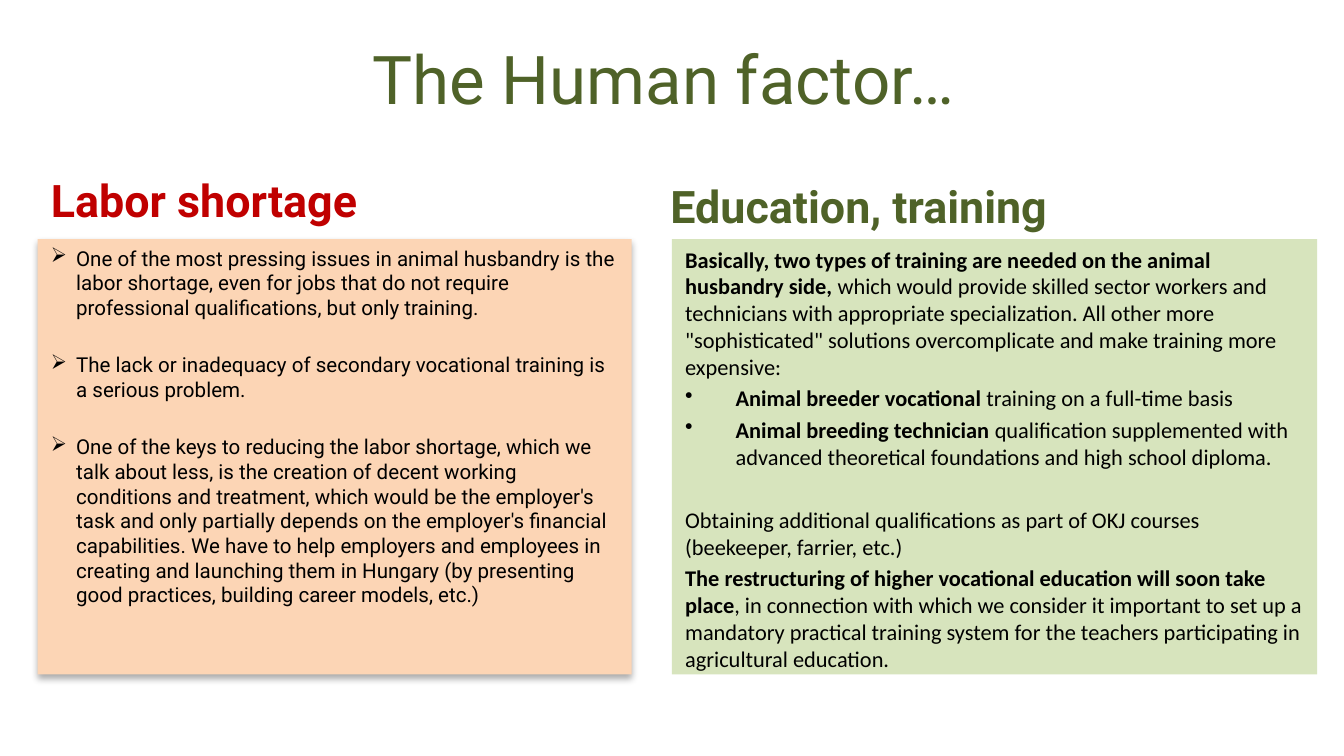
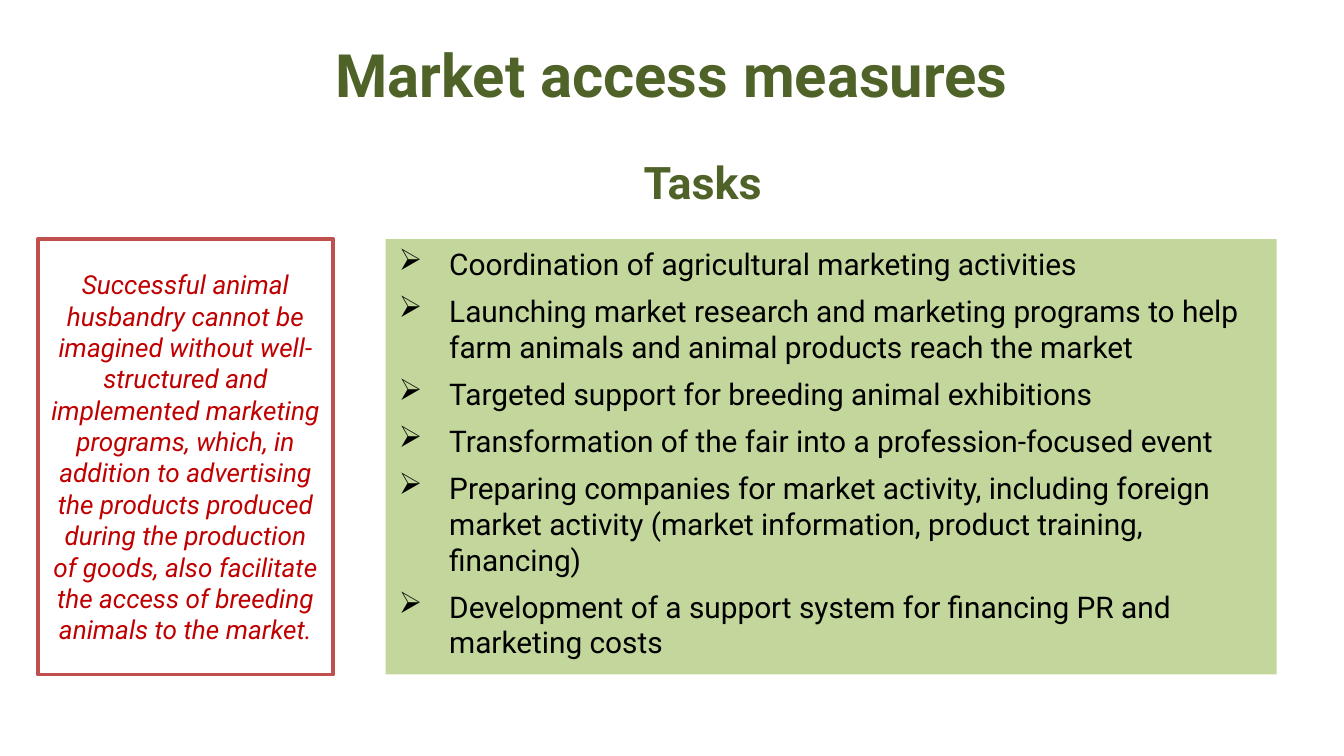
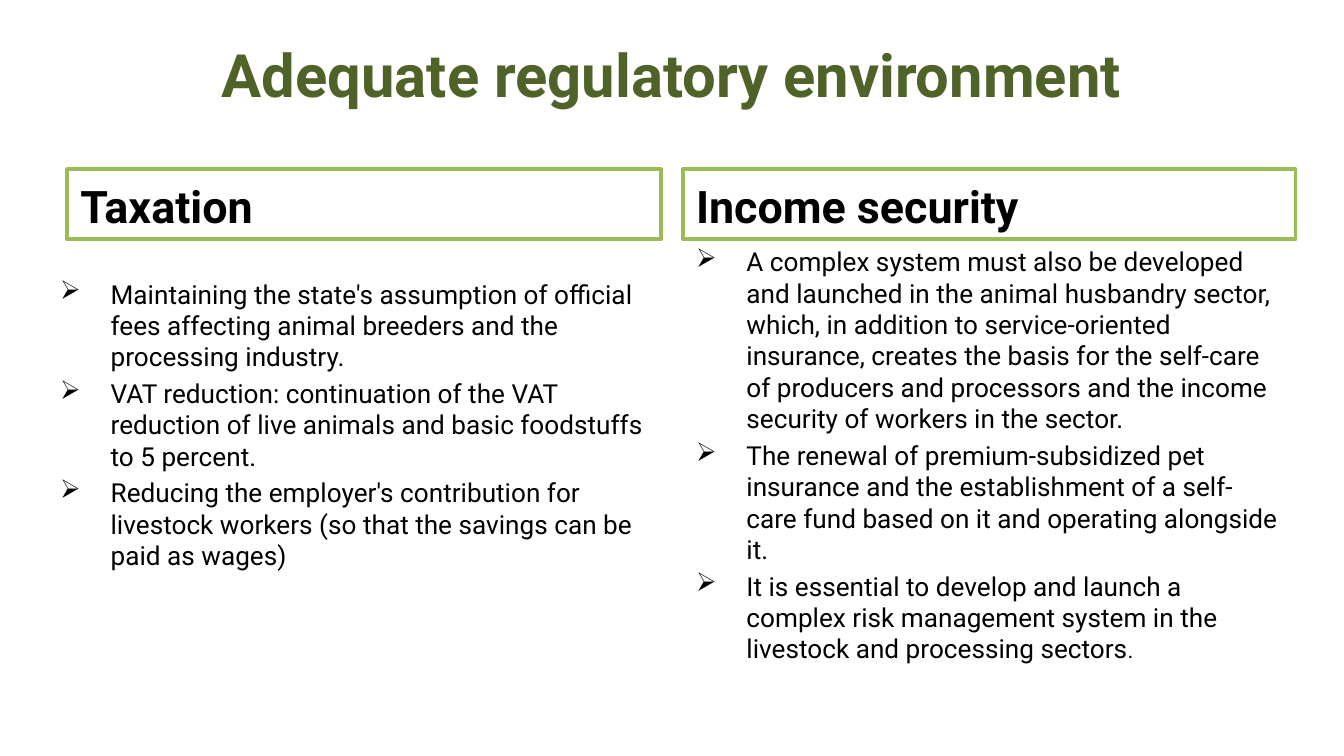
from pptx import Presentation, util as u
from pptx.dml.color import RGBColor
from pptx.enum import shapes, text
from pptx.oxml.ns import qn
from lxml import etree

Pt = u.Pt
GREEN = RGBColor(0x4F, 0x62, 0x28)
RED = RGBColor(0xC0, 0x00, 0x00)
BLACK = RGBColor(0x00, 0x00, 0x00)
WHITE = RGBColor(0xFF, 0xFF, 0xFF)
PEACH = RGBColor(0xFC, 0xD5, 0xB5)
PALE = RGBColor(0xD7, 0xE4, 0xBD)
LEAF = RGBColor(0xC3, 0xD6, 0x9B)
BRICK = RGBColor(0xC0, 0x50, 0x4D)
LIME = RGBColor(0x9B, 0xBB, 0x59)

# Shared places: the body panels all have the same top and height
TOP, HIGH = 128.1, 233.3
BAND = 37.5
ARROW, DOT = "➢", "•"
LEFT, MID = text.PP_ALIGN.LEFT, text.PP_ALIGN.CENTER
UP, CENTER, DOWN = text.MSO_ANCHOR.TOP, text.MSO_ANCHOR.MIDDLE, text.MSO_ANCHOR.BOTTOM


def write(slide, at, paras, size=14, color=BLACK, font="Roboto", bold=False,
          italic=False, align=LEFT, anchor=UP, fill=None, line=None,
          indent=27, gap=None, inset=3.6):
    """Each paragraph is (bullet, space before or None, [(text, format), ...])."""
    place = [Pt(n) for n in at]
    if fill is None:
        box = slide.shapes.add_textbox(*place)
    else:
        box = slide.shapes.add_shape(shapes.MSO_SHAPE.RECTANGLE, *place)
        box.shadow.inherit = False
        box.fill.solid()
        box.fill.fore_color.rgb = fill
        if line is None:
            box.line.fill.background()
        else:
            box.line.color.rgb = line
            box.line.width = Pt(2)
    frame = box.text_frame
    frame.word_wrap = True
    frame.vertical_anchor = anchor
    frame.margin_left = frame.margin_right = Pt(7.2)
    frame.margin_top, frame.margin_bottom = Pt(inset), Pt(3.6)
    for i, (mark, before, runs) in enumerate(paras):
        para = frame.add_paragraph() if i else frame.paragraphs[0]
        para.alignment = align
        if i:
            usual = size * 0.2 if gap is None else gap
            para.space_before = Pt(usual if before is None else before)
        if mark:
            props = para._p.get_or_add_pPr()
            props.set("marL", str(Pt(indent)))
            props.set("indent", str(-Pt(indent)))
            etree.SubElement(props, qn("a:buChar"), char=mark)
        for words, form in runs:
            run = para.add_run()
            run.text = words
            run.font.name = font
            run.font.size = Pt(form.get("size", size))
            run.font.bold = form.get("bold", bold)
            run.font.italic = italic
            run.font.color.rgb = color
    return box


def plain(*lines, mark=None):
    return [(mark, None, [(words, {})]) for words in lines]


deck = Presentation()
deck.slide_width, deck.slide_height = Pt(720), Pt(405)

# Slides with their titles
pages = []
for title, size, bold in [("The Human factor… ", 36, False),
                          ("Market access measures", 32, True),
                          ("Adequate regulatory environment", 32, True)]:
    page = deck.slides.add_slide(deck.slide_layouts[6])
    write(page, (36, 16.6, 648, 67.7), plain(title), size=size, bold=bold,
          color=GREEN, align=MID)
    pages.append(page)
human, market, rules = pages

# Headings above the panels
for page, head, x, y, wide, color, form in [
        (human, "Labor shortage", 20.2, 87.1, 318.2, RED, {}),
        (human, "Education, training", 352.1, 90.7, 318.2, GREEN, {}),
        (market, "Tasks", 337.7, 77.8, 318.2, GREEN, {}),
        (rules, "Taxation", 36, 90.7, 318.2, BLACK, {"fill": WHITE, "line": LIME}),
        (rules, "Income security", 365.8, 90.7, 328.3, BLACK,
         {"fill": WHITE, "line": LIME})]:
    write(page, (x, y, wide, BAND), plain(head), size=24, bold=True,
          color=color, anchor=DOWN, **form)

# Human factor: labor panel with a soft shadow
labor = write(human, (20.2, TOP, 318.2, HIGH), plain(
    "One of the most pressing issues in animal husbandry is the labor shortage, "
    "even for jobs that do not require professional qualifications, but only training.",
    "The lack or inadequacy of secondary vocational training is a serious problem.",
    "One of the keys to reducing the labor shortage, which we talk about less, is the "
    "creation of decent working conditions and treatment, which would be the employer's "
    "task and only partially depends on the employer's financial capabilities. We have to "
    "help employers and employees in creating and launching them in Hungary (by presenting "
    "good practices, building career models, etc.)",
    mark=ARROW), size=11, fill=PEACH, indent=13.5, gap=17.5)
glow = labor._element.spPr.find(qn("a:effectLst"))
shade = etree.SubElement(glow, qn("a:outerShdw"), blurRad=str(Pt(3.5)),
                         dist=str(Pt(2.2)), dir="5400000", rotWithShape="0")
tint = etree.SubElement(shade, qn("a:srgbClr"), val=str(BLACK))
etree.SubElement(tint, qn("a:alpha"), val="32000")

# Human factor: education panel
strong = {"bold": True}
write(human, (360, TOP, 345.6, HIGH), [
    (None, None, [
        ("Basically, two types of training are needed on the animal husbandry side, ", strong),
        ("which would provide skilled sector workers and technicians with appropriate "
         "specialization. All other more \"sophisticated\" solutions overcomplicate and "
         "make training more expensive:", {})]),
    (DOT, None, [("Animal breeder vocational ", strong),
                 ("training on a full-time basis", {})]),
    (DOT, None, [("Animal breeding technician ", strong),
                 ("qualification supplemented with advanced theoretical foundations "
                  "and high school diploma.", {})]),
    (None, 19.4, [("Obtaining additional qualifications as part of OKJ courses "
                   "(beekeeper, farrier, etc.)", {})]),
    (None, None, [
        ("The restructuring of higher vocational education will soon take place", strong),
        (", in connection with which we consider it important to set up a mandatory "
         "practical training system for the teachers participating in agricultural "
         "education.", {})]),
], size=12, font="Calibri", fill=PALE)

# Market access: statement and tasks
write(market, (20.2, TOP, 158.4, HIGH), plain(
    "Successful animal husbandry cannot be imagined without well-structured and implemented "
    "marketing programs, which, in addition to advertising the products produced during the "
    "production of goods, also facilitate the access of breeding animals to the market."),
    color=RED, italic=True, align=MID, anchor=CENTER, fill=WHITE, line=BRICK)
write(market, (206.6, TOP, 477.4, HIGH), plain(
    "Coordination of agricultural marketing activities",
    "Launching market research and marketing programs to help farm animals and animal "
    "products reach the market",
    "Targeted support for breeding animal exhibitions",
    "Transformation of the fair into a profession-focused event",
    "Preparing companies for market activity, including foreign market activity "
    "(market information, product training, financing)",
    "Development of a support system for financing PR and marketing costs",
    mark=ARROW), size=16, fill=LEAF, gap=6)

# Regulatory environment: two lists
write(rules, (25.2, TOP, 328.3, HIGH), plain(
    "Maintaining the state's assumption of official fees affecting animal breeders and "
    "the processing industry.",
    "VAT reduction: continuation of the VAT reduction of live animals and basic foodstuffs "
    "to 5 percent.",
    "Reducing the employer's contribution for livestock workers (so that the savings can be "
    "paid as wages)",
    mark=ARROW), inset=20.8)
write(rules, (365.8, TOP, 328.3, HIGH), plain(
    "A complex system must also be developed and launched in the animal husbandry sector, "
    "which, in addition to service-oriented insurance, creates the basis for the self-care "
    "of producers and processors and the income security of workers in the sector.",
    "The renewal of premium-subsidized pet insurance and the establishment of a self-care "
    "fund based on it and operating alongside it.",
    mark=ARROW) + [(ARROW, None, [
        ("It is essential to develop and launch a complex risk management system in the "
         "livestock and processing sectors", {}), (".", {"size": 12})])])

deck.save("out.pptx")
